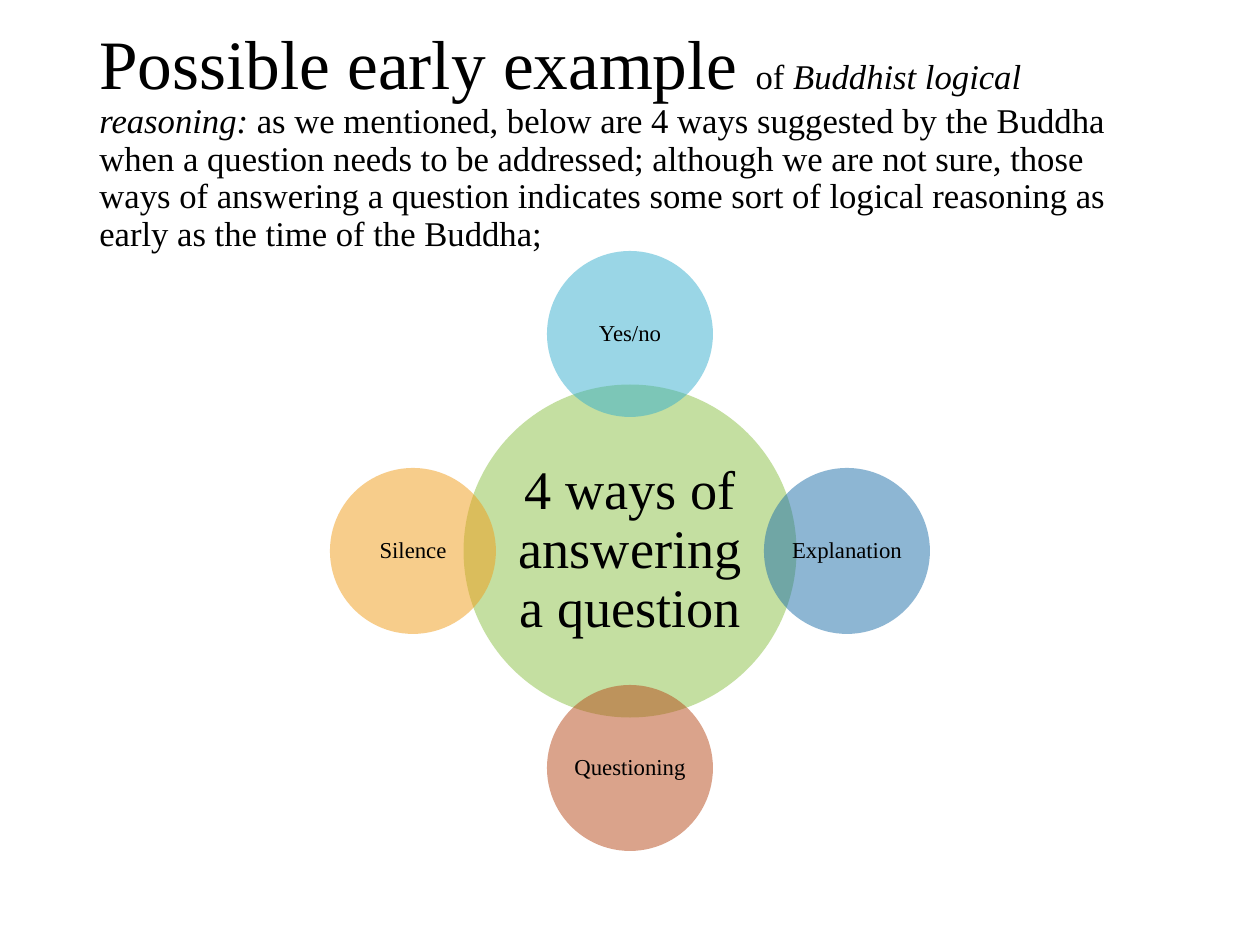
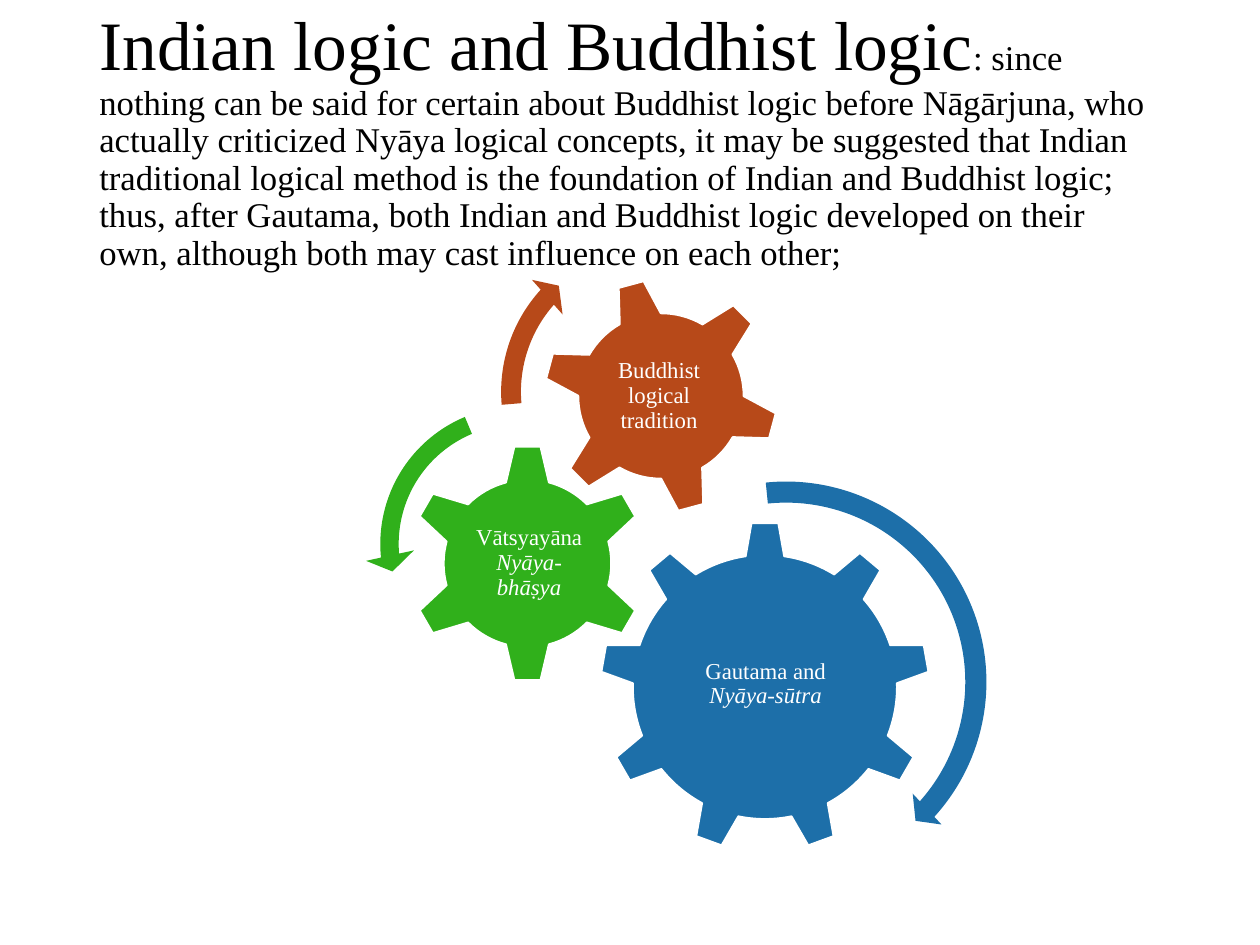
import math

from lxml import etree
from pptx import Presentation
from pptx.dml.color import RGBColor
from pptx.enum.shapes import MSO_SHAPE
from pptx.enum.text import MSO_ANCHOR, PP_ALIGN
from pptx.oxml.ns import qn
from pptx.util import Emu, Pt

PX_PER_INCH = 126
EMU_PER_PX = 914400 / PX_PER_INCH

FONT = "Times New Roman"
BLACK = RGBColor(0x00, 0x00, 0x00)
WHITE = RGBColor(0xFF, 0xFF, 0xFF)
LIME = RGBColor(0x8B, 0xC1, 0x45)
AQUA = RGBColor(0x36, 0xAF, 0xCE)
BLUE = RGBColor(0x1D, 0x6F, 0xA9)
RUST = RGBColor(0xB7, 0x49, 0x19)
AMBER = RGBColor(0xF1, 0x9D, 0x19)
GREEN = RGBColor(0x30, 0xB0, 0x1B)

ELLIPSE = MSO_SHAPE.OVAL
GEAR_6 = MSO_SHAPE.GEAR_6
GEAR_9 = MSO_SHAPE.GEAR_9
ARC_RIGHT = MSO_SHAPE.CIRCULAR_ARROW
ARC_LEFT = MSO_SHAPE.LEFT_CIRCULAR_ARROW
MIDDLE = MSO_ANCHOR.MIDDLE
LEFT = PP_ALIGN.LEFT
CENTER = PP_ALIGN.CENTER

TITLE_BOX = (87, 50, 1086, 183)
TITLE_SIZE = 39.6
SUBTITLE_SIZE = 19.8
LABEL_SIZE = 13
HUB_SIZE = 31
LABEL_INSET = 3

HUB_CENTER = (630, 551)
HUB_DIAMETER = 333
SATELLITE_DIAMETER = 166
ORBIT_RADIUS = 217


def px(n):
    return Emu(round(n * EMU_PER_PX))


def write(sp, runs, color, align=CENTER, inset=None):
    """Fill sp with one paragraph; runs are (text, size, italic)."""
    tf = sp.text_frame
    tf.word_wrap = True
    tf.vertical_anchor = MIDDLE
    if inset is not None:
        tf.margin_left = tf.margin_right = px(inset)
        tf.margin_top = tf.margin_bottom = px(inset)
    p = tf.paragraphs[0]
    p.alignment = align
    p.line_spacing = 0.9
    p.font.name = FONT
    p.font.color.rgb = color
    for text, size, italic in runs:
        r = p.add_run()
        r.text = text
        r.font.size = Pt(size)
        r.font.italic = italic
        r.font.name = FONT
        r.font.color.rgb = color


def add_text(slide, box, runs, color, align=CENTER, inset=None):
    sp = slide.shapes.add_textbox(*map(px, box))
    write(sp, runs, color, align, inset)


def add_title(slide, runs):
    add_text(slide, TITLE_BOX, runs, BLACK, LEFT)


def add_square_shape(slide, kind, left, top, side, color):
    sp = slide.shapes.add_shape(kind, px(left), px(top), px(side), px(side))
    sp.shadow.inherit = False
    sp.fill.solid()
    sp.fill.fore_color.rgb = color
    sp.line.fill.background()
    return sp


def add_circle(slide, center, diameter, color, text, size, inset):
    """Half-transparent circle with a centred caption."""
    left, top = (c - diameter / 2 for c in center)
    sp = add_square_shape(slide, ELLIPSE, left, top, diameter, color)
    rgb = sp.fill._xPr.find(qn("a:solidFill")).find(qn("a:srgbClr"))
    etree.SubElement(rgb, qn("a:alpha")).set("val", "50000")
    write(sp, [(text, size, False)], BLACK, inset=inset)


def add_gear(slide, kind, left, top, side, color, label_box, runs, rotation=0):
    """Gear with an upright label that ignores the gear's rotation."""
    sp = add_square_shape(slide, kind, left, top, side, color)
    sp.line.color.rgb = WHITE
    sp.line.width = Pt(1)
    sp.rotation = rotation
    add_text(slide, label_box, runs, WHITE, inset=LABEL_INSET)


def add_arc_arrow(slide, kind, left, top, side, color, adjustments):
    sp = add_square_shape(slide, kind, left, top, side, color)
    for i, value in enumerate(adjustments):
        sp.adjustments[i] = value


def build_four_ways(slide):
    add_title(slide, [
        ("Possible early example ", TITLE_SIZE, False),
        ("of ", SUBTITLE_SIZE, False),
        ("Buddhist logical reasoning:", SUBTITLE_SIZE, True),
        (" as we mentioned, below are 4 ways suggested by the Buddha when a "
         "question needs to be addressed; although we are not sure, those "
         "ways of answering a question indicates some sort of logical "
         "reasoning as early as the time of the Buddha;", SUBTITLE_SIZE, False),
    ])
    add_circle(slide, HUB_CENTER, HUB_DIAMETER, LIME,
               "4 ways of answering a question", HUB_SIZE, 5)
    ways = [("Yes/no", AQUA), ("Explanation", BLUE),
            ("Questioning", RUST), ("Silence", AMBER)]
    for i, (text, color) in enumerate(ways):
        angle = 2 * math.pi * i / len(ways)
        center = (HUB_CENTER[0] + ORBIT_RADIUS * math.sin(angle),
                  HUB_CENTER[1] - ORBIT_RADIUS * math.cos(angle))
        add_circle(slide, center, SATELLITE_DIAMETER, color, text,
                   LABEL_SIZE, LABEL_INSET)


def build_traditions(slide):
    add_title(slide, [
        ("Indian logic and Buddhist logic", TITLE_SIZE, False),
        (": since nothing can be said for certain about Buddhist logic before "
         "Nāgārjuna, who actually criticized Nyāya logical concepts, it may "
         "be suggested that Indian traditional logical method is the "
         "foundation of Indian and Buddhist logic; thus, after Gautama, both "
         "Indian and Buddhist logic developed on their own, although both may "
         "cast influence on each other;", SUBTITLE_SIZE, False),
    ])
    add_gear(slide, GEAR_9, 600, 522, 330, BLUE, (667, 599, 197, 170),
             [("Gautama and ", LABEL_SIZE, False),
              ("Nyāya-sūtra", LABEL_SIZE, True)])
    add_gear(slide, GEAR_6, 408, 444, 239, GREEN, (469, 504, 120, 118),
             [("Vātsyayāna ", LABEL_SIZE, False),
              ("Nyāya-bhāṣya", LABEL_SIZE, True)])
    add_gear(slide, GEAR_6, 543, 278, 236, RUST, (593, 330, 132, 132),
             [("Buddhist logical tradition", LABEL_SIZE, False)], rotation=345)
    add_arc_arrow(slide, ARC_RIGHT, 575, 471, 422, BLUE,
                  (0.05, 2.99, 25.2, 158.53, 0.05))
    add_arc_arrow(slide, ARC_LEFT, 365, 391, 306, GREEN,
                  (0.06, 4.3, 104.89, 148.38, 0.08))
    add_arc_arrow(slide, ARC_RIGHT, 488, 227, 330, RUST,
                  (0.06, 3.94, 133.14, 105.08, 0.07))


def main():
    prs = Presentation()
    prs.slide_width = px(1260)
    prs.slide_height = px(945)
    blank = prs.slide_layouts[6]
    for build in (build_four_ways, build_traditions):
        build(prs.slides.add_slide(blank))
    prs.save("out.pptx")


if __name__ == "__main__":
    main()
